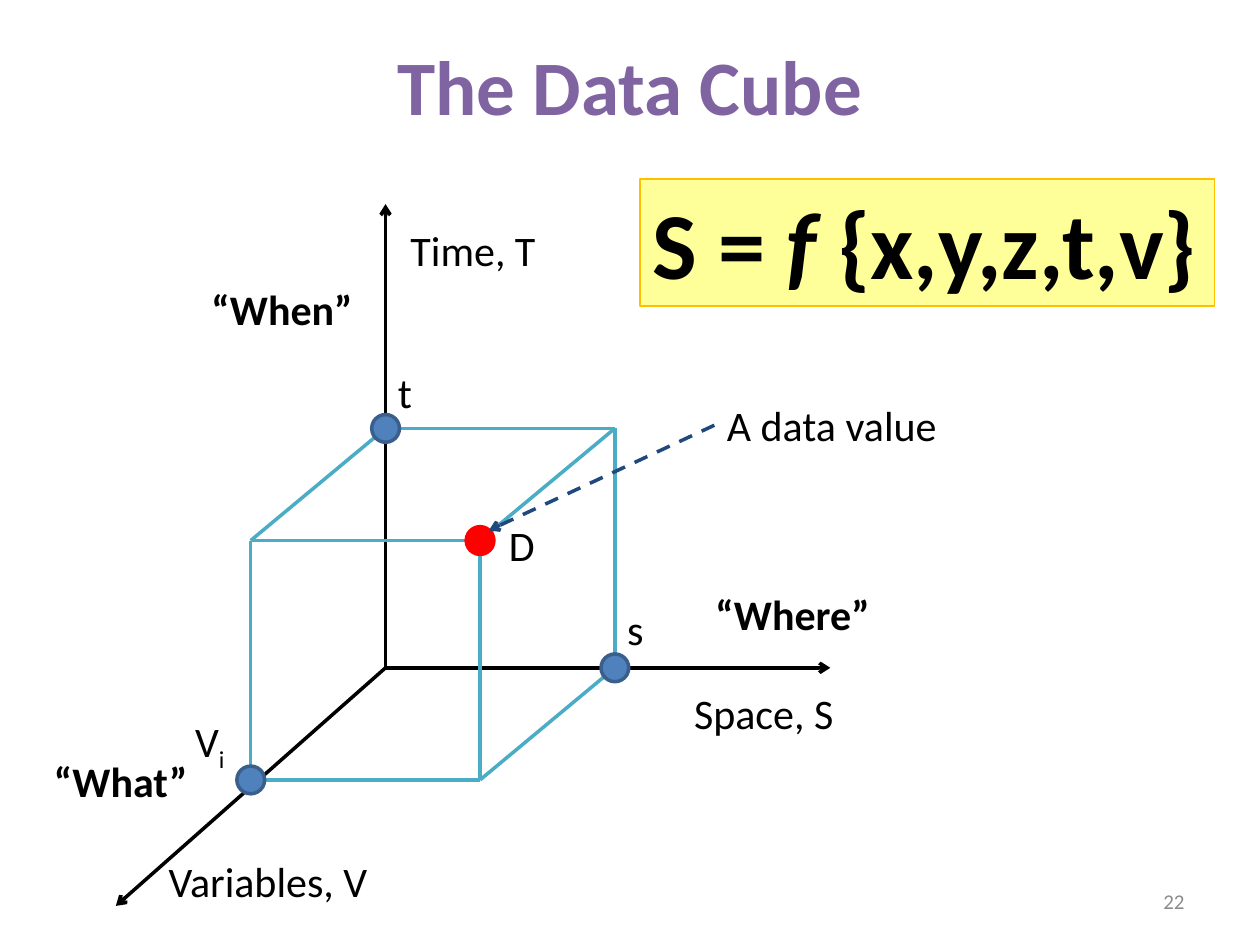
from dataclasses import dataclass
from itertools import combinations, product

from pptx import Presentation
from pptx import util as u
from pptx.dml import color
from pptx.enum import dml, shapes, text
from pptx.oxml import ns, xmlchemy


@dataclass(frozen=True)
class Theme:
    font: str = "Calibri"
    title: str = "8064A2"
    ink: str = "000000"
    edge: str = "4BACC6"
    dot: str = "4F81BD"
    dot_line: str = "3A5F8C"
    value: str = "FF0000"
    pointer: str = "1F497D"
    formula_fill: str = "FFFF99"
    formula_line: str = "FFC000"
    number: str = "8C8C8C"
    title_size: int = 44
    formula_size: int = 54
    label_size: int = 24
    number_size: int = 12
    line_width: float = 2


THEME = Theme()
ORIGIN = (3.06, 5.3)
RIGHT, UP, FRONT = (1.82, 0), (0, -1.9), (-1.07, 0.89)
DOT_SIZE = 0.22

AXIS_ENDS = [(3.06, 1.62), (0.92, 7.19), (6.59, 5.3)]
LABELS = [
    ("Space, S", (5.41, 5.41, 1.32, 0.51), False),
    ("Time, T", (3.16, 1.73, 1.2, 0.51), False),
    ("Variables, V", (1.24, 6.74, 1.8, 0.51), False),
    ("s", (4.88, 4.74, 0.33, 0.51), False),
    ("t", (3.06, 2.86, 0.31, 0.51), False),
    ("D", (3.94, 4.07, 0.41, 0.51), False),
    ("“Where”", (5.58, 4.62, 1.44, 0.51), True),
    ("“What”", (0.33, 5.95, 1.27, 0.51), True),
    ("“When”", (1.58, 2.2, 1.34, 0.51), True),
]


def rgb(value):
    return color.RGBColor.from_string(value)


def inches(values):
    return [u.Inches(value) for value in values]


def add_span(para, words, size, ink=THEME.ink, **extra):
    span = para.add_run()
    span.text = words
    for name, value in {"name": THEME.font, "size": u.Pt(size), **extra}.items():
        setattr(span.font, name, value)
    span.font.color.rgb = rgb(ink)
    return span


def fit_to_text(shape):
    frame = shape.text_frame
    settings = {
        "word_wrap": False,
        "auto_size": text.MSO_AUTO_SIZE.SHAPE_TO_FIT_TEXT,
        "vertical_anchor": text.MSO_ANCHOR.TOP,
    }
    for name, value in settings.items():
        setattr(frame, name, value)
    para = frame.paragraphs[0]
    para.alignment = text.PP_ALIGN.LEFT
    return para


def add_label(page, words, place, bold=False):
    box = page.shapes.add_textbox(*inches(place))
    para = fit_to_text(box)
    add_span(para, words, THEME.label_size, bold=bold)
    return box


def add_shape(page, kind, place, fill, line, width):
    shape = page.shapes.add_shape(kind, *inches(place))
    shape.shadow.inherit = False
    shape.fill.solid()
    shape.fill.fore_color.rgb = rgb(fill)
    shape.line.color.rgb = rgb(line)
    shape.line.width = u.Pt(width)
    return shape


def add_dot(page, center, fill, line):
    x, y = center
    place = (x - DOT_SIZE / 2, y - DOT_SIZE / 2, DOT_SIZE, DOT_SIZE)
    add_shape(page, shapes.MSO_SHAPE.OVAL, place, fill, line, THEME.line_width)


def add_line(page, start, end, ink, arrow=False):
    line = page.shapes.add_connector(
        shapes.MSO_CONNECTOR.STRAIGHT, *inches((*start, *end))
    )
    line.line.color.rgb = rgb(ink)
    line.line.width = u.Pt(THEME.line_width)
    properties = line._element.spPr
    properties.append(xmlchemy.OxmlElement("a:effectLst"))
    if arrow:
        head = xmlchemy.OxmlElement("a:tailEnd")
        head.set("type", "arrow")
        properties.find(ns.qn("a:ln")).append(head)
    return line


def corner(steps):
    vectors = (RIGHT, UP, FRONT)
    return tuple(
        ORIGIN[axis] + sum(step * vector[axis] for step, vector in zip(steps, vectors))
        for axis in (0, 1)
    )


def add_cube(page):
    corners = [steps for steps in product((0, 1), repeat=3) if any(steps)]
    for start, end in combinations(corners, 2):
        if sum(a != b for a, b in zip(start, end)) == 1:
            add_line(page, corner(start), corner(end), THEME.edge)
    for steps in [(1, 0, 0), (0, 1, 0), (0, 0, 1)]:
        add_dot(page, corner(steps), THEME.dot, THEME.dot_line)
    add_dot(page, corner((1, 1, 1)), THEME.value, THEME.value)


def add_title(page):
    title = page.shapes.title
    place = inches((0.5, 0.17, 9, 1))
    for name, value in zip(("left", "top", "width", "height"), place):
        setattr(title, name, value)
    title.text_frame.vertical_anchor = text.MSO_ANCHOR.MIDDLE
    para = title.text_frame.paragraphs[0]
    para.alignment = text.PP_ALIGN.CENTER
    add_span(para, "The Data Cube", THEME.title_size, THEME.title, bold=True)


def add_variable_label(page):
    box = add_label(page, "V", (1.45, 5.63, 0.44, 0.51))
    index = add_span(box.text_frame.paragraphs[0], "i", THEME.label_size)
    index._r.get_or_add_rPr().set("baseline", "-25000")


def add_pointer(page):
    box = add_label(page, "A data value", (5.67, 3.12, 1.88, 0.51))
    line = add_line(page, (5.67, 3.37), (3.88, 4.21), THEME.pointer, arrow=True)
    line.line.dash_style = dml.MSO_LINE.DASH
    line.begin_connect(box, 1)


def add_formula(page):
    box = add_shape(
        page, shapes.MSO_SHAPE.RECTANGLE, (5.08, 1.42, 4.56, 1.01),
        THEME.formula_fill, THEME.formula_line, 0.75,
    )
    para = fit_to_text(box)
    for words, italic in [("S = ", False), ("f ", True), ("{x,y,z,t,v}", False)]:
        add_span(para, words, THEME.formula_size, bold=True, italic=italic)


def add_page_number(page):
    box = page.shapes.add_textbox(*inches((7.17, 6.95, 2.33, 0.4)))
    box.text_frame.word_wrap = True
    box.text_frame.vertical_anchor = text.MSO_ANCHOR.MIDDLE
    para = box.text_frame.paragraphs[0]
    para.alignment = text.PP_ALIGN.RIGHT
    add_span(para, "22", THEME.number_size, THEME.number)


def main():
    deck = Presentation()
    deck.slide_width, deck.slide_height = inches((10, 7.5))
    page = deck.slides.add_slide(deck.slide_layouts[5])
    add_title(page)
    for end in AXIS_ENDS:
        add_line(page, ORIGIN, end, THEME.ink, arrow=True)
    add_cube(page)
    for words, place, bold in LABELS:
        add_label(page, words, place, bold)
    add_variable_label(page)
    add_pointer(page)
    add_formula(page)
    add_page_number(page)
    deck.save("out.pptx")


if __name__ == "__main__":
    main()
